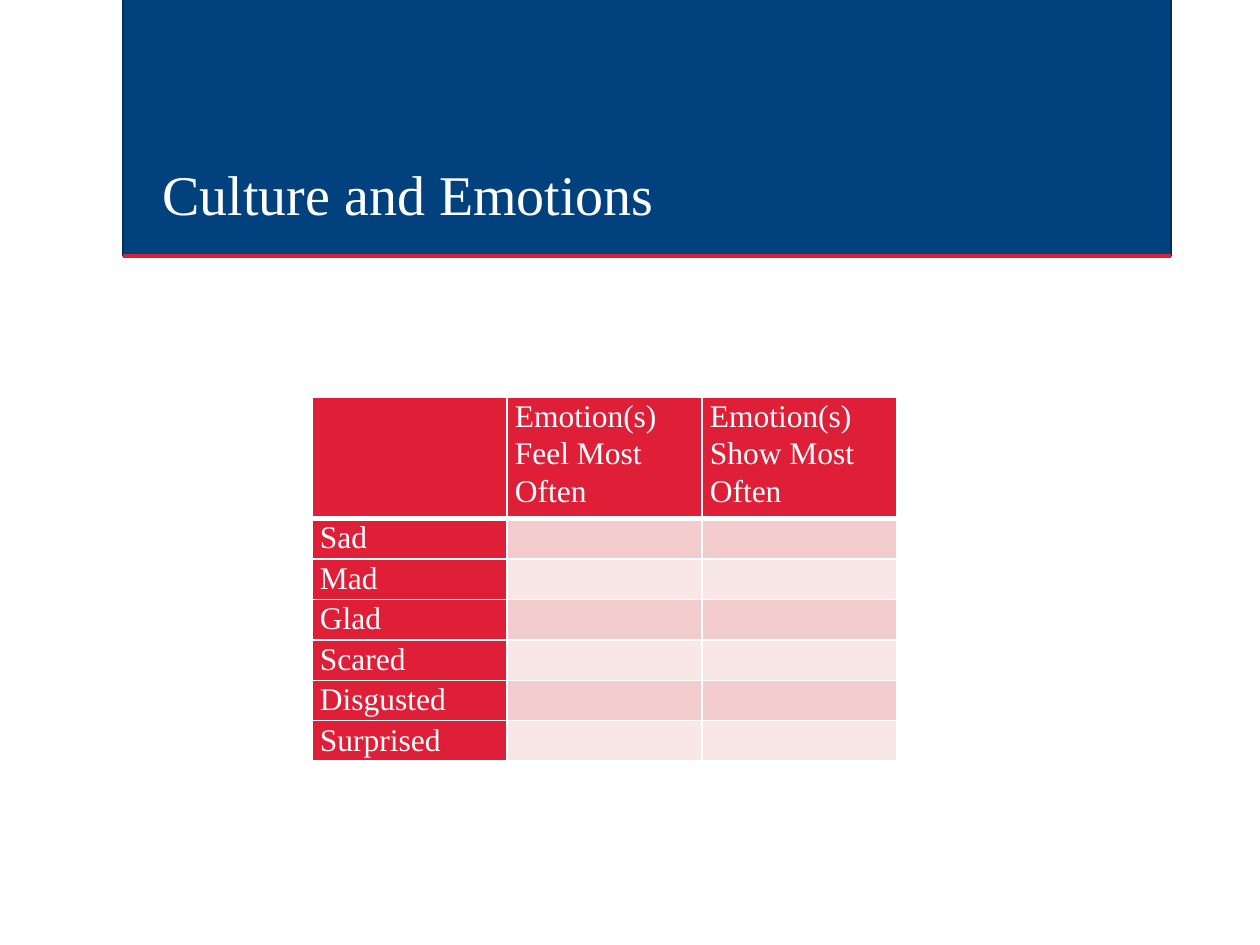
import dataclasses

import lxml.etree
import pptx
import pptx.dml.color
import pptx.enum.shapes
import pptx.enum.text
import pptx.oxml.ns
import pptx.util

SCALE = 914400 // 126
qn = pptx.oxml.ns.qn


@dataclasses.dataclass(frozen=True)
class Theme:
    blue: str = "00417E"
    navy: str = "002F5B"
    red: str = "DE1F37"
    rose: str = "F2CBCC"
    pale: str = "F9E7E7"
    white: str = "FFFFFF"
    font: str = "Times New Roman"
    title: int = 32
    body: int = 18
    small: int = 12


THEME = Theme()
HEADS = ["", "Emotion(s) Feel Most Often", "Emotion(s) Show Most Often"]
MOODS = ["Sad", "Mad", "Glad", "Scared", "Disgusted", "Surprised"]


def px(*sizes):
    return [pptx.util.Emu(size * SCALE) for size in sizes]


def rgb(code):
    return pptx.dml.color.RGBColor.from_string(code)


def style(item, values):
    for name, value in values.items():
        setattr(item, name, value)


def paint(fill, code):
    fill.solid()
    fill.fore_color.rgb = rgb(code)


def stroke(line, code, width):
    paint(line.fill, code)
    line.width = pptx.util.Pt(width)


def write(frame, text, size, space):
    para = frame.paragraphs[0]
    para.line_spacing = space
    run = para.add_run()
    run.text = text
    style(run.font, {"name": THEME.font, "size": pptx.util.Pt(size)})
    run.font.color.rgb = rgb(THEME.white)


def add_band(slide):
    kind = pptx.enum.shapes.MSO_SHAPE.RECTANGLE
    band = slide.shapes.add_shape(kind, *px(123, -2, 1048, 258))
    band.shadow.inherit = False
    paint(band.fill, THEME.blue)
    stroke(band.line, THEME.navy, 1.25)


def add_rule(slide):
    kind = pptx.enum.shapes.MSO_CONNECTOR.STRAIGHT
    rule = slide.shapes.add_connector(kind, *px(123, 256, 1171, 256))
    stroke(rule.line, THEME.red, 2.5)
    lxml.etree.SubElement(rule._element.spPr, qn("a:effectLst"))


def add_title(slide, text):
    frame = slide.shapes.add_textbox(*px(150, 111, 993, 123)).text_frame
    style(frame, {
        "word_wrap": True,
        "vertical_anchor": pptx.enum.text.MSO_ANCHOR.BOTTOM,
    })
    write(frame, text, THEME.title, 0.9)


def edge(cell, side, width):
    props = cell._tc.get_or_add_tcPr()
    line = lxml.etree.SubElement(
        props, qn("a:ln" + side), w=str(pptx.util.Pt(width)))
    fill = lxml.etree.SubElement(line, qn("a:solidFill"))
    lxml.etree.SubElement(fill, qn("a:srgbClr"), val=THEME.white)


def fill_cell(cell, text, row, col):
    left, flat = px(8, 0)
    style(cell, {
        "margin_left": left, "margin_right": left,
        "margin_top": flat, "margin_bottom": flat,
    })
    widths = {"L": 1, "R": 1, "T": 3 if row == 1 else 1,
              "B": 3 if row == 0 else 1}
    for side, width in widths.items():
        edge(cell, side, width)
    shade = THEME.rose if row % 2 else THEME.pale
    paint(cell.fill, THEME.red if row == 0 or col == 0 else shade)
    if text:
        write(cell.text_frame, text, THEME.body, 1.07)
    else:
        end = cell.text_frame.paragraphs[0]._p.get_or_add_endParaRPr()
        end.set("sz", str(THEME.small * 100))


def add_grid(slide):
    rows = [HEADS] + [[mood, "", ""] for mood in MOODS]
    high = [118] + [37] * len(MOODS)
    wide = 195
    grid = slide.shapes.add_table(
        len(rows), len(HEADS),
        *px(312, 397, wide * len(HEADS), sum(high))).table
    for col in grid.columns:
        col.width = px(wide)[0]
    for row, (size, texts) in enumerate(zip(high, rows)):
        grid.rows[row].height = px(size)[0]
        for col, text in enumerate(texts):
            fill_cell(grid.cell(row, col), text, row, col)


def main():
    deck = pptx.Presentation()
    wide, high = px(1260, 945)
    style(deck, {"slide_width": wide, "slide_height": high})
    slide = deck.slides.add_slide(deck.slide_layouts[6])
    add_band(slide)
    add_rule(slide)
    add_title(slide, "Culture and Emotions")
    add_grid(slide)
    deck.save("out.pptx")


if __name__ == "__main__":
    main()
